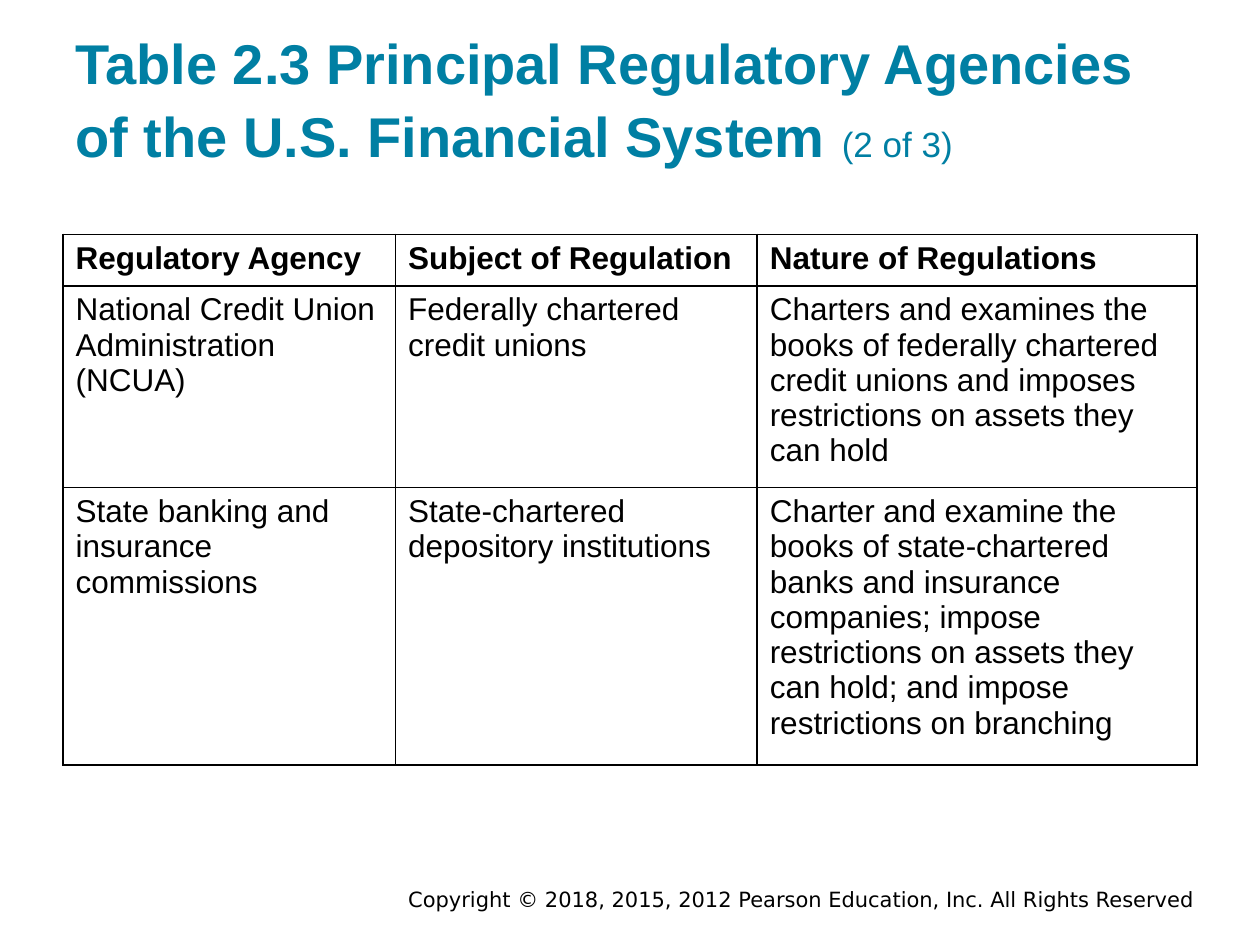
import pptx
import pptx.util
import pptx.dml.color
import pptx.enum.text
from lxml import etree

Inches = pptx.util.Inches
Pt = pptx.util.Pt
RGBColor = pptx.dml.color.RGBColor
Anchor = pptx.enum.text.MSO_ANCHOR
Align = pptx.enum.text.PP_ALIGN

TEAL = RGBColor(0x00, 0x7F, 0xA3)
BLACK = RGBColor(0, 0, 0)
WHITE = RGBColor(255, 255, 255)

WIDE, HIGH = Inches(10), Inches(7.5)
EDGE = 0.05  # side margin as a share of the width
COLS = (2.64, 2.87, 3.49)
ROWS = (0.41, 1.5, 2.06)
NS = "http://schemas.openxmlformats.org/drawingml/2006/main"

CELLS = (
    ("Regulatory Agency", "Subject of Regulation", "Nature of Regulations"),
    ("National Credit Union\nAdministration\n(NCUA)",
     "Federally chartered\ncredit unions",
     "Charters and examines the books of federally chartered credit unions "
     "and imposes restrictions on assets they can hold"),
    ("State banking and insurance commissions",
     "State-chartered\ndepository institutions",
     "Charter and examine the books of state-chartered banks and insurance "
     "companies; impose restrictions on assets they can hold; "
     "and impose restrictions on branching"),
)


def style(font, size, color, bold=False, name="Arial"):
    font.name = name
    font.size = Pt(size)
    font.bold = bold
    font.color.rgb = color


def add_box(slide, left, top, width, height, anchor, inset):
    """Add a text box placed by shares of the slide's size."""
    box = slide.shapes.add_textbox(int(WIDE * left), int(HIGH * top),
                                   int(WIDE * width), int(HIGH * height))
    frame = box.text_frame
    frame.word_wrap = True
    frame.vertical_anchor = anchor
    frame.margin_top = frame.margin_bottom = Inches(inset)
    return frame


def add_title(slide, text, part):
    frame = add_box(slide, EDGE, 0.032, 1 - 2 * EDGE, 0.16, Anchor.BOTTOM, 0.1)
    para = frame.paragraphs[0]
    para.line_spacing = 1.09
    para.text = text
    style(para.runs[0].font, 32, TEAL, bold=True)
    run = para.add_run()
    run.text = part
    style(run.font, 20, TEAL)


def add_footer(slide, text):
    frame = add_box(slide, 0.175, 0.937, 0.783, 0.03, Anchor.MIDDLE, 0.05)
    para = frame.paragraphs[0]
    para.text = text
    para.alignment = Align.RIGHT
    style(para.runs[0].font, 12, BLACK, name="DejaVu Sans")


def add_rules(cell):
    """Draw a thin black border on each side of a cell."""
    props = cell._tc.get_or_add_tcPr()
    for spot, side in enumerate(("lnL", "lnR", "lnT", "lnB")):
        line = etree.Element(f"{{{NS}}}{side}", w=str(Pt(1)))
        fill = etree.SubElement(line, f"{{{NS}}}solidFill")
        etree.SubElement(fill, f"{{{NS}}}srgbClr", val=str(BLACK))
        props.insert(spot, line)


def fill_cell(cell, text, bold):
    cell.text_frame.text = text
    for para in cell.text_frame.paragraphs:
        for run in para.runs:
            style(run.font, 18, BLACK, bold)
    cell.fill.solid()
    cell.fill.fore_color.rgb = WHITE
    add_rules(cell)


def add_grid(slide):
    table = slide.shapes.add_table(
        len(ROWS), len(COLS), int(WIDE * EDGE), int(HIGH * 0.248),
        Inches(sum(COLS)), Inches(sum(ROWS))).table
    table.horz_banding = False
    for col, width in zip(table.columns, COLS):
        col.width = Inches(width)
    for row, height, texts in zip(table.rows, ROWS, CELLS):
        row.height = Inches(height)
        for cell, text in zip(row.cells, texts):
            fill_cell(cell, text, bold=texts is CELLS[0])


def main():
    deck = pptx.Presentation()
    deck.slide_width, deck.slide_height = WIDE, HIGH
    slide = deck.slides.add_slide(deck.slide_layouts[6])

    # Footer, heading and table, from back to front
    add_footer(slide, "Copyright © 2018, 2015, 2012 Pearson Education, Inc. "
                      "All Rights Reserved")
    add_title(slide, "Table 2.3 Principal Regulatory Agencies "
                     "of the U.S. Financial System ", "(2 of 3)")
    add_grid(slide)
    deck.save("out.pptx")


if __name__ == "__main__":
    main()
